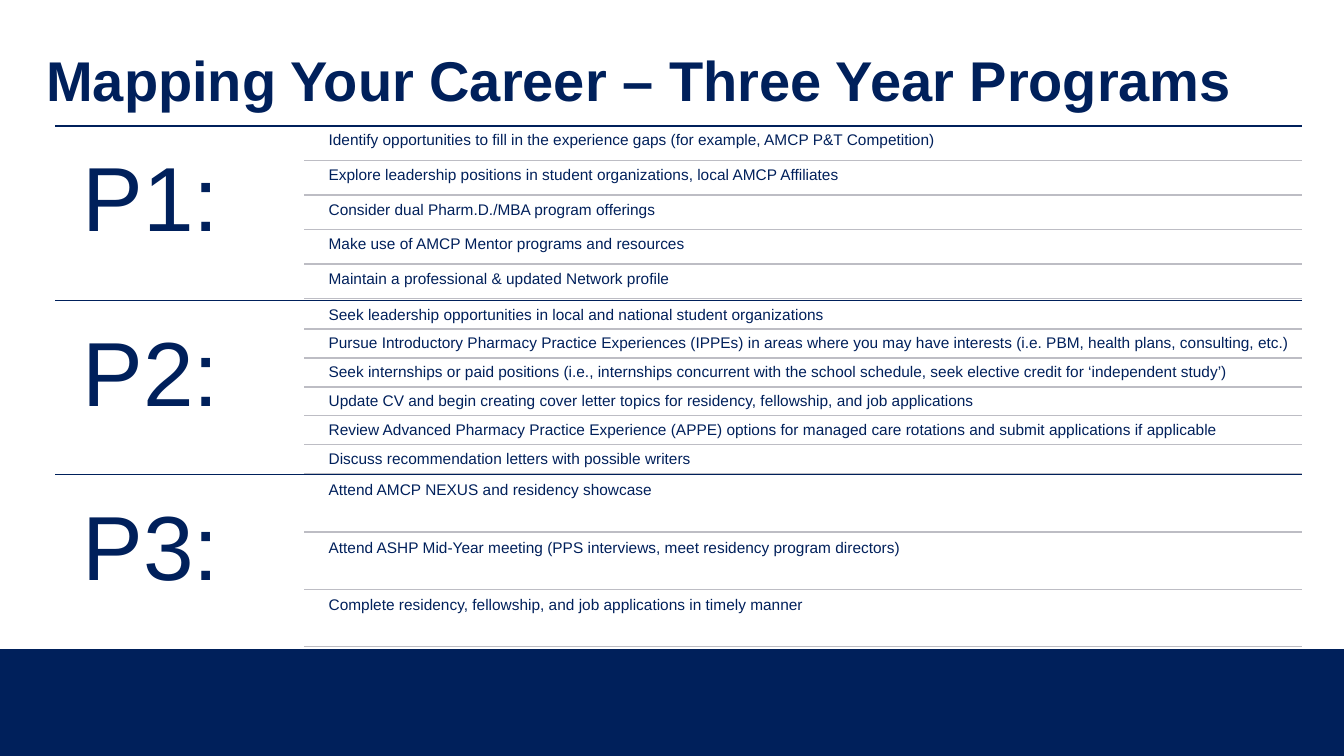
from dataclasses import dataclass

from pptx import Presentation
from pptx.dml.color import RGBColor
from pptx.enum.shapes import MSO_CONNECTOR, MSO_SHAPE
from pptx.enum.text import MSO_ANCHOR, MSO_AUTO_SIZE, PP_ALIGN
from pptx.oxml.ns import qn
from pptx.util import Inches, Pt


@dataclass(frozen=True)
class Theme:
    font: str = "Arial"
    navy: RGBColor = RGBColor(0x00, 0x20, 0x5B)
    gray: RGBColor = RGBColor(0xBD, 0xBD, 0xC4)
    title_size: int = 40
    year_size: int = 65
    item_size: int = 11


theme = Theme()


def write_text(shape, text, size, margin, anchor=MSO_ANCHOR.TOP, bold=False):
    frame = shape.text_frame
    frame.word_wrap = True
    frame.auto_size = MSO_AUTO_SIZE.NONE
    frame.vertical_anchor = anchor
    frame.margin_left = frame.margin_right = Inches(margin)
    frame.margin_top = frame.margin_bottom = Inches(margin)
    para = frame.paragraphs[0]
    para.alignment = PP_ALIGN.LEFT
    para.line_spacing = 0.9
    span = para.add_run()
    span.text = text
    span.font.name = theme.font
    span.font.size = Pt(size)
    span.font.bold = bold
    span.font.color.rgb = theme.navy


def draw_rule(page, left, top, color):
    rule = page.shapes.add_connector(
        MSO_CONNECTOR.STRAIGHT, Inches(left), Inches(top), Inches(right_edge), Inches(top))
    rule.line.color.rgb = color
    rule.line.width = Pt(1)
    properties = rule._element.spPr
    properties.append(properties.makeelement(qn("a:effectLst"), {}))


programs = {
    "P1:": [
        "Identify opportunities to fill in the experience gaps (for example, AMCP P&T Competition)",
        "Explore leadership positions in student organizations, local AMCP Affiliates",
        "Consider dual Pharm.D./MBA program offerings",
        "Make use of AMCP Mentor programs and resources",
        "Maintain a professional & updated Network profile",
    ],
    "P2:": [
        "Seek leadership opportunities in local and national student organizations",
        "Pursue Introductory Pharmacy Practice Experiences (IPPEs) in areas where you may have "
        "interests (i.e. PBM, health plans, consulting, etc.)",
        "Seek internships or paid positions (i.e., internships concurrent with the school "
        "schedule, seek elective credit for ‘independent study’)",
        "Update CV and begin creating cover letter topics for residency, fellowship, and job "
        "applications",
        "Review Advanced Pharmacy Practice Experience (APPE) options for managed care rotations "
        "and submit applications if applicable",
        "Discuss recommendation letters with possible writers",
    ],
    "P3:": [
        "Attend AMCP NEXUS and residency showcase",
        "Attend ASHP Mid-Year meeting (PPS interviews, meet residency program directors)",
        "Complete residency, fellowship, and job applications in timely manner",
    ],
}

# Layout in inches
year_left, rule_left, item_left, right_edge = 0.55, 3.02, 3.21, 12.91
first_top, section_height = 1.25, 1.73
gap_ratio = 0.05  # gap between items as a share of item height

deck = Presentation()
deck.slide_width, deck.slide_height = Inches(13.33), Inches(7.5)
page = deck.slides.add_slide(deck.slide_layouts[5])

# Title
title = page.shapes.title
title.left, title.top = Inches(0.46), Inches(0.1)
title.width, title.height = Inches(11.96), Inches(1.45)
write_text(title, "Mapping Your Career – Three Year Programs", theme.title_size, 0,
           MSO_ANCHOR.MIDDLE, bold=True)

# Footer band
band = page.shapes.add_shape(
    MSO_SHAPE.RECTANGLE, 0, Inches(6.44), deck.slide_width, Inches(1.06))
band.shadow.inherit = False
band.fill.solid()
band.fill.fore_color.rgb = theme.navy
band.line.fill.background()

# One section per year, its items spread evenly over the section height
for index, (year, items) in enumerate(programs.items()):
    section_top = first_top + index * section_height
    draw_rule(page, year_left, section_top, theme.navy)
    year_box = page.shapes.add_textbox(
        Inches(year_left), Inches(section_top),
        Inches(rule_left - year_left), Inches(section_height))
    write_text(year_box, year, theme.year_size, 0.27)

    item_height = section_height / (len(items) + gap_ratio * (len(items) + 1))
    gap = gap_ratio * item_height
    for row, item in enumerate(items):
        item_top = section_top + gap + row * (item_height + gap)
        item_box = page.shapes.add_textbox(
            Inches(item_left), Inches(item_top),
            Inches(right_edge - item_left), Inches(item_height))
        write_text(item_box, item, theme.item_size, 0.05)
        draw_rule(page, rule_left, item_top + item_height, theme.gray)

deck.save("out.pptx")
